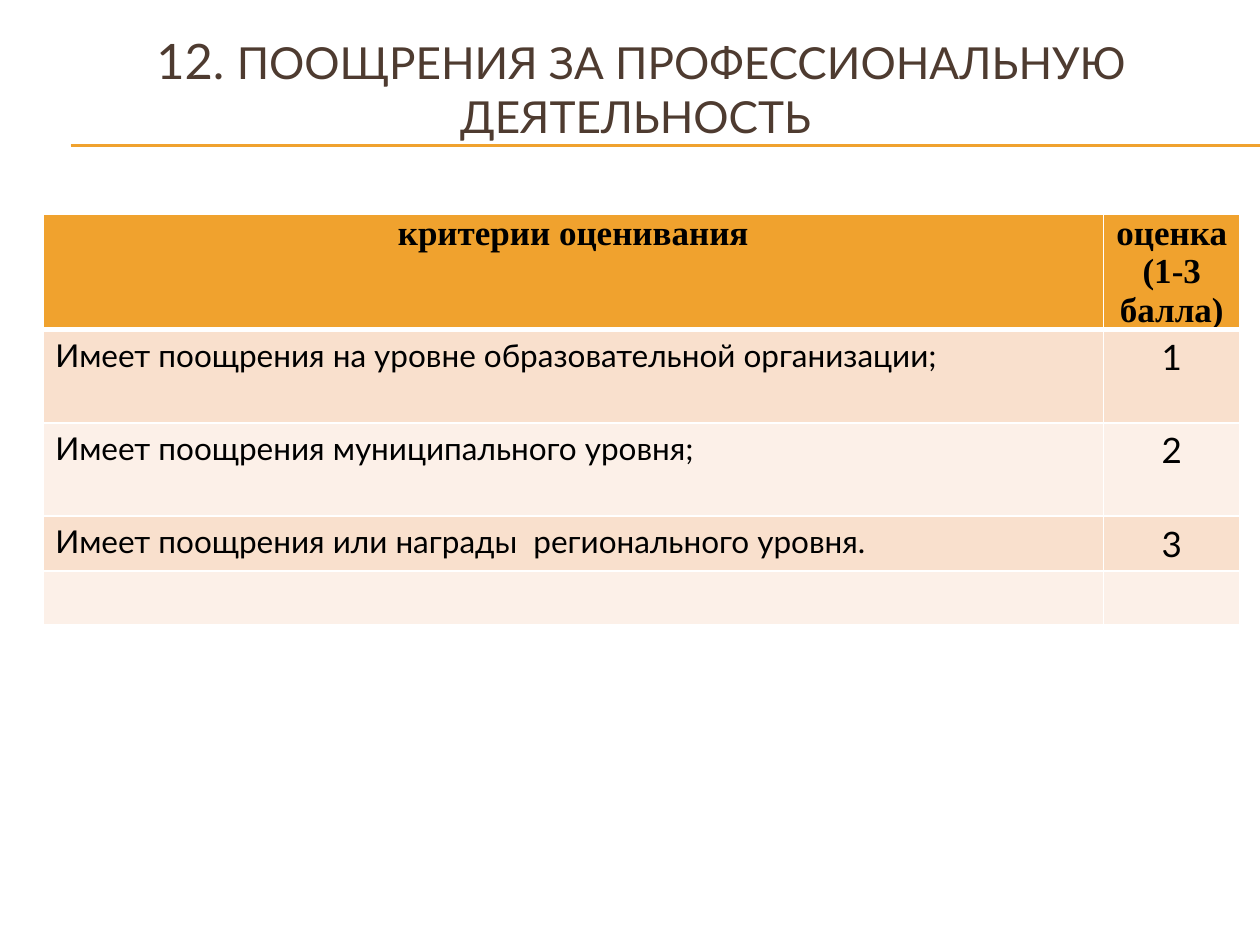
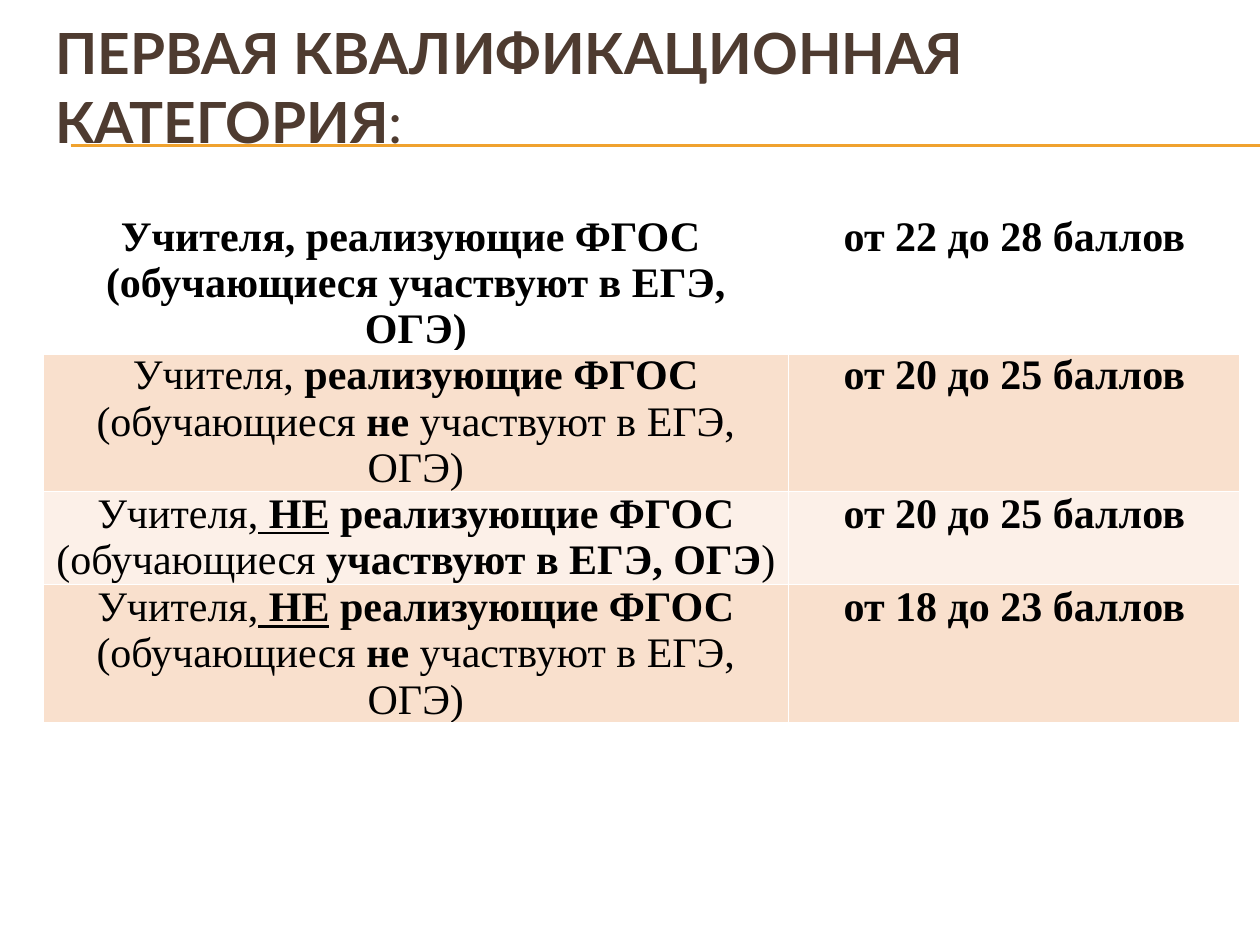
import pptx
import pptx.dml.color
import pptx.enum.shapes
import pptx.enum.text
import pptx.oxml
import pptx.oxml.ns
import pptx.util

Inches = pptx.util.Inches
Pt = pptx.util.Pt
LEFT = pptx.enum.text.PP_ALIGN.LEFT
CENTER = pptx.enum.text.PP_ALIGN.CENTER

COLORS = {
    "accent": "F0A22E",
    "title": "4E3B30",
    "text": "000000",
    "white": "FFFFFF",
    "band_dark": "F9E0CD",
    "band_light": "FCF0E8",
}
SANS, SERIF = "Lato", "Times New Roman"
SERIF_LINE_SHARE = 1.1
SLIDE_WIDTH, SLIDE_HEIGHT = 10, 7.5
MARGIN_LEFT, CONTENT_WIDTH = 0.34, 9.5
TITLE_TOP, TITLE_HEIGHT, TITLE_LIFT = 0.5, 0.92, 0.55
RULE_LEFT, RULE_TOPS = 0.56, (1.15, 1.16)
TABLE_TOP = 1.7


def write_paragraph(paragraph, runs, font_name, size, color, alignment):
    paragraph.alignment = alignment
    if font_name == SERIF:
        paragraph.line_spacing = Pt(size * SERIF_LINE_SHARE)
    paragraph.font.name = font_name
    paragraph.font.size = Pt(size)
    paragraph.font.color.rgb = pptx.dml.color.RGBColor.from_string(COLORS[color])
    same_style = len({style for _, style in runs}) == 1
    if same_style:
        paragraph.font.bold = "b" in runs[0][1]
    for text, style in runs:
        run = paragraph.add_run()
        run.text = text
        if not same_style:
            run.font.bold = "b" in style
            if "u" in style:
                run.font.underline = True


def style_cell(cell, fill, top_width, bottom_width):
    properties = cell._tc.get_or_add_tcPr()
    for side, width in (("L", 1), ("R", 1), ("T", top_width), ("B", bottom_width)):
        properties.append(pptx.oxml.parse_xml(
            f'<a:ln{side} {pptx.oxml.ns.nsdecls("a")} w="{Pt(width)}"><a:solidFill>'
            f'<a:srgbClr val="{COLORS["white"]}"/></a:solidFill></a:ln{side}>'))
    cell.fill.solid()
    cell.fill.fore_color.rgb = pptx.dml.color.RGBColor.from_string(COLORS[fill])


not_implementing = [("Учителя,", ""), (" НЕ", "bu"), (" реализующие ФГОС", "b"), (" (обучающиеся ", "")]
not_taking_exams = [("не", "b"), (" участвуют в ЕГЭ, ОГЭ)", "")]

pages = [
    {
        "title": [("12. ", "", 27.9), ("ПООЩРЕНИЯ ЗА ПРОФЕССИОНАЛЬНУЮ ДЕЯТЕЛЬНОСТЬ ", "", 25.2)],
        "title_alignment": CENTER,
        "columns": [8.42, 1.08],
        "row_heights": [0.91, 0.74, 0.74, 0.43, 0.43],
        "header_fill": "accent",
        "header_size": 20,
        "body_font": SANS,
        "body_sizes": [18, 20],
        "body_alignments": [LEFT, CENTER],
        "body_insets": (0.1, 0.05),
        "rows": [
            [[[("критерии оценивания", "b")]], [[("оценка ", "b")], [("(1-3 балла)", "b")]]],
            [[[("Имеет поощрения на уровне образовательной организации;", "")]], [[("1", "")]]],
            [[[("Имеет поощрения муниципального уровня;", "")]], [[("2", "")]]],
            [[[("Имеет поощрения или награды  регионального уровня.", "")]], [[("3", "")]]],
            [[], []],
        ],
    },
    {
        "title": [("ПЕРВАЯ КВАЛИФИКАЦИОННАЯ КАТЕГОРИЯ", "b", 32.4), (": ", "", 32.4)],
        "title_alignment": LEFT,
        "columns": [5.92, 3.58],
        "row_heights": [1.1, 1.1, 0.74, 1.1],
        "header_fill": "white",
        "header_size": 24,
        "body_font": SERIF,
        "body_sizes": [24, 24],
        "body_alignments": [CENTER, CENTER],
        "body_insets": (0.07, 0),
        "rows": [
            [[[("Учителя, реализующие ФГОС  (обучающиеся участвуют в ЕГЭ, ОГЭ)", "b")]],
             [[("от 22 до 28 баллов", "b")]]],
            [[[("Учителя, ", ""), ("реализующие ФГОС ", "b"), ("(обучающиеся ", "")] + not_taking_exams],
             [[("от 20 до 25 баллов", "b")]]],
            [[not_implementing + [("участвуют в ЕГЭ, ОГЭ", "b"), (")", "")]],
             [[("от 20 до 25 баллов", "b")]]],
            [[not_implementing + not_taking_exams], [[("от 18 до 23 баллов", "b")]]],
        ],
    },
]

presentation = pptx.Presentation()
presentation.slide_width = Inches(SLIDE_WIDTH)
presentation.slide_height = Inches(SLIDE_HEIGHT)

for page in pages:
    slide = presentation.slides.add_slide(presentation.slide_layouts[6])

    for rule_top in RULE_TOPS:
        rule = slide.shapes.add_connector(
            pptx.enum.shapes.MSO_CONNECTOR.STRAIGHT,
            Inches(RULE_LEFT), Inches(rule_top), Inches(SLIDE_WIDTH), Inches(rule_top))
        rule.line.color.rgb = pptx.dml.color.RGBColor.from_string(COLORS["accent"])
        rule.line.width = Pt(0.75)
        rule._element.spPr.append(pptx.oxml.parse_xml(f'<a:effectLst {pptx.oxml.ns.nsdecls("a")}/>'))

    title = slide.shapes.add_textbox(
        Inches(MARGIN_LEFT), Inches(TITLE_TOP), Inches(CONTENT_WIDTH), Inches(TITLE_HEIGHT))
    title_frame = title.text_frame
    title_frame.word_wrap = True
    title_frame.vertical_anchor = pptx.enum.text.MSO_ANCHOR.MIDDLE
    title_frame.margin_top = 0
    title_frame.margin_bottom = Inches(TITLE_LIFT)
    title_paragraph = title_frame.paragraphs[0]
    title_runs = [(text, style) for text, style, _ in page["title"]]
    write_paragraph(title_paragraph, title_runs, SANS, page["title"][0][2], "title", page["title_alignment"])
    for run, (_, _, size) in zip(title_paragraph.runs, page["title"]):
        run.font.size = Pt(size)

    table = slide.shapes.add_table(
        len(page["rows"]), len(page["columns"]), Inches(MARGIN_LEFT), Inches(TABLE_TOP),
        Inches(CONTENT_WIDTH), Inches(sum(page["row_heights"]))).table
    table.first_row = False
    table.horz_banding = False
    for column, width in zip(table.columns, page["columns"]):
        column.width = Inches(width)
    for row, height in zip(table.rows, page["row_heights"]):
        row.height = Inches(height)

    for row_index, row_cells in enumerate(page["rows"]):
        is_header = row_index == 0
        band = "band_dark" if row_index % 2 else "band_light"
        inset_x, inset_y = (0.07, 0) if is_header else page["body_insets"]
        for column_index, paragraphs in enumerate(row_cells):
            cell = table.cell(row_index, column_index)
            style_cell(cell, page["header_fill"] if is_header else band,
                       3 if row_index == 1 else 1, 3 if is_header else 1)
            cell.margin_left = cell.margin_right = Inches(inset_x)
            cell.margin_top = cell.margin_bottom = Inches(inset_y)
            for paragraph_index, runs in enumerate(paragraphs):
                frame = cell.text_frame
                paragraph = frame.add_paragraph() if paragraph_index else frame.paragraphs[0]
                write_paragraph(
                    paragraph, runs,
                    SERIF if is_header else page["body_font"],
                    page["header_size"] if is_header else page["body_sizes"][column_index],
                    "text",
                    CENTER if is_header else page["body_alignments"][column_index])

presentation.save("out.pptx")
